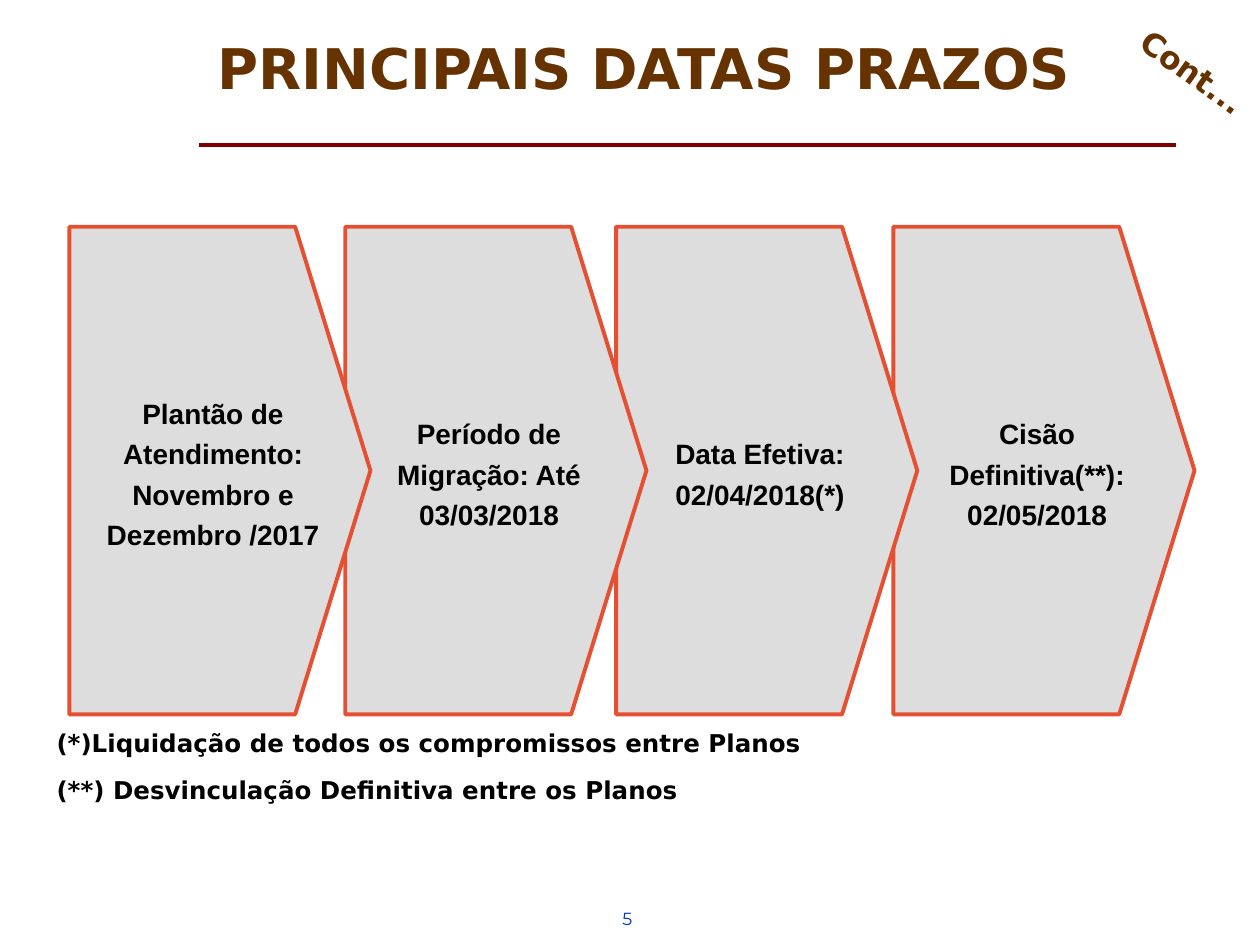
from dataclasses import dataclass

from lxml import etree
from pptx import Presentation
from pptx.dml.color import RGBColor
from pptx.enum.shapes import MSO_CONNECTOR, MSO_SHAPE
from pptx.enum.text import MSO_ANCHOR, MSO_AUTO_SIZE, PP_ALIGN
from pptx.oxml.ns import qn
from pptx.util import Inches, Pt


@dataclass(frozen=True)
class Theme:
    brown: RGBColor = RGBColor(0x66, 0x33, 0x00)
    maroon: RGBColor = RGBColor(0x80, 0x00, 0x00)
    orange: RGBColor = RGBColor(0xE6, 0x50, 0x32)
    gray: RGBColor = RGBColor(0xDD, 0xDD, 0xDD)
    blue: RGBColor = RGBColor(0x00, 0x33, 0xCC)
    black: RGBColor = RGBColor(0, 0, 0)
    heading_font: str = "DejaVu Sans"
    step_font: str = "Arial"
    number_font: str = "Montserrat"
    title_size: Pt = Pt(32)
    cont_size: Pt = Pt(18)
    step_size: Pt = Pt(16)
    note_size: Pt = Pt(14)
    number_size: Pt = Pt(10)


THEME = Theme()


def add_run(paragraph, text, font, size, color, bold=True):
    run = paragraph.add_run()
    run.text = text
    run.font.name = font
    run.font.size = size
    run.font.bold = bold
    run.font.color.rgb = color


def set_frame(frame, anchor, margin=None):
    frame.word_wrap = True
    frame.auto_size = MSO_AUTO_SIZE.NONE
    frame.vertical_anchor = anchor
    if margin is not None:
        frame.margin_left = frame.margin_right = margin
        frame.margin_top = frame.margin_bottom = margin


prs = Presentation()
prs.slide_width, prs.slide_height = Inches(10), Inches(7.5)
slide = prs.slides.add_slide(prs.slide_layouts[5])
shapes = slide.shapes

# Title
title = shapes.title
title.left, title.top = Inches(0.43), Inches(0.05)
title.width, title.height = Inches(9.37), Inches(0.75)
set_frame(title.text_frame, MSO_ANCHOR.BOTTOM, 0)
heading = title.text_frame.paragraphs[0]
heading.alignment = PP_ALIGN.CENTER
heading.line_spacing = 0.8
add_run(heading, "PRINCIPAIS DATAS PRAZOS", THEME.heading_font,
        THEME.title_size, THEME.brown)

# Rule under the title
rule = shapes.add_connector(MSO_CONNECTOR.STRAIGHT, Inches(1.58), Inches(1.15),
                            Inches(9.33), Inches(1.15))
rule.line.color.rgb = THEME.maroon
rule.line.width = Pt(2)
etree.SubElement(rule._element.spPr, qn("a:effectLst"))

# Timeline steps, last one first so that each tip overlaps the next step
steps = [
    (0.55, "Plantão de Atendimento: Novembro e Dezembro /2017"),
    (2.74, "Período de Migração: Até 03/03/2018"),
    (4.89, "Data Efetiva: 02/04/2018(*)"),
    (7.09, "Cisão Definitiva(**): 02/05/2018"),
]
for left, label in reversed(steps):
    step = shapes.add_shape(MSO_SHAPE.PENTAGON, Inches(left), Inches(1.8),
                            Inches(2.39), Inches(3.87))
    step.adjustments[0] = 0.25
    step.shadow.inherit = False
    step.fill.solid()
    step.fill.fore_color.rgb = THEME.gray
    step.line.color.rgb = THEME.orange
    step.line.width = Pt(2.25)
    set_frame(step.text_frame, MSO_ANCHOR.MIDDLE)
    deadline = step.text_frame.paragraphs[0]
    deadline.alignment = PP_ALIGN.CENTER
    deadline.line_spacing = 1.2
    indent = deadline._p.get_or_add_pPr()
    indent.set("marL", str(Inches(0.19)))
    indent.set("indent", "0")
    add_run(deadline, label, THEME.step_font, THEME.step_size, THEME.black)

# Footnotes
footnotes = shapes.add_textbox(Inches(0.35), Inches(5.68),
                               Inches(8.19), Inches(0.78)).text_frame
set_frame(footnotes, MSO_ANCHOR.TOP)
notes = ["(*)Liquidação de todos os compromissos entre Planos",
         "(**) Desvinculação Definitiva entre os Planos"]
for index, note in enumerate(notes):
    footnote = footnotes.add_paragraph() if index else footnotes.paragraphs[0]
    footnote.line_spacing = 1.2
    if index:
        footnote.space_before = Pt(7)
    add_run(footnote, note, THEME.heading_font, THEME.note_size, THEME.black)

# Tilted continuation mark
cont = shapes.add_textbox(Inches(8.73), Inches(0.05), Inches(1.45), Inches(1.07))
cont.rotation = 35.5
set_frame(cont.text_frame, MSO_ANCHOR.MIDDLE, Inches(0.03))
cont_line = cont.text_frame.paragraphs[0]
cont_line.alignment = PP_ALIGN.CENTER
cont_line.line_spacing = 0.9
add_run(cont_line, "Cont...", THEME.heading_font, THEME.cont_size, THEME.brown)

# Page number
page_number = shapes.add_textbox(Inches(4.84), Inches(7.16),
                                 Inches(0.71), Inches(0.34)).text_frame
set_frame(page_number, MSO_ANCHOR.TOP)
add_run(page_number.paragraphs[0], "5", THEME.number_font, THEME.number_size,
        THEME.blue, bold=False)

prs.save("out.pptx")
